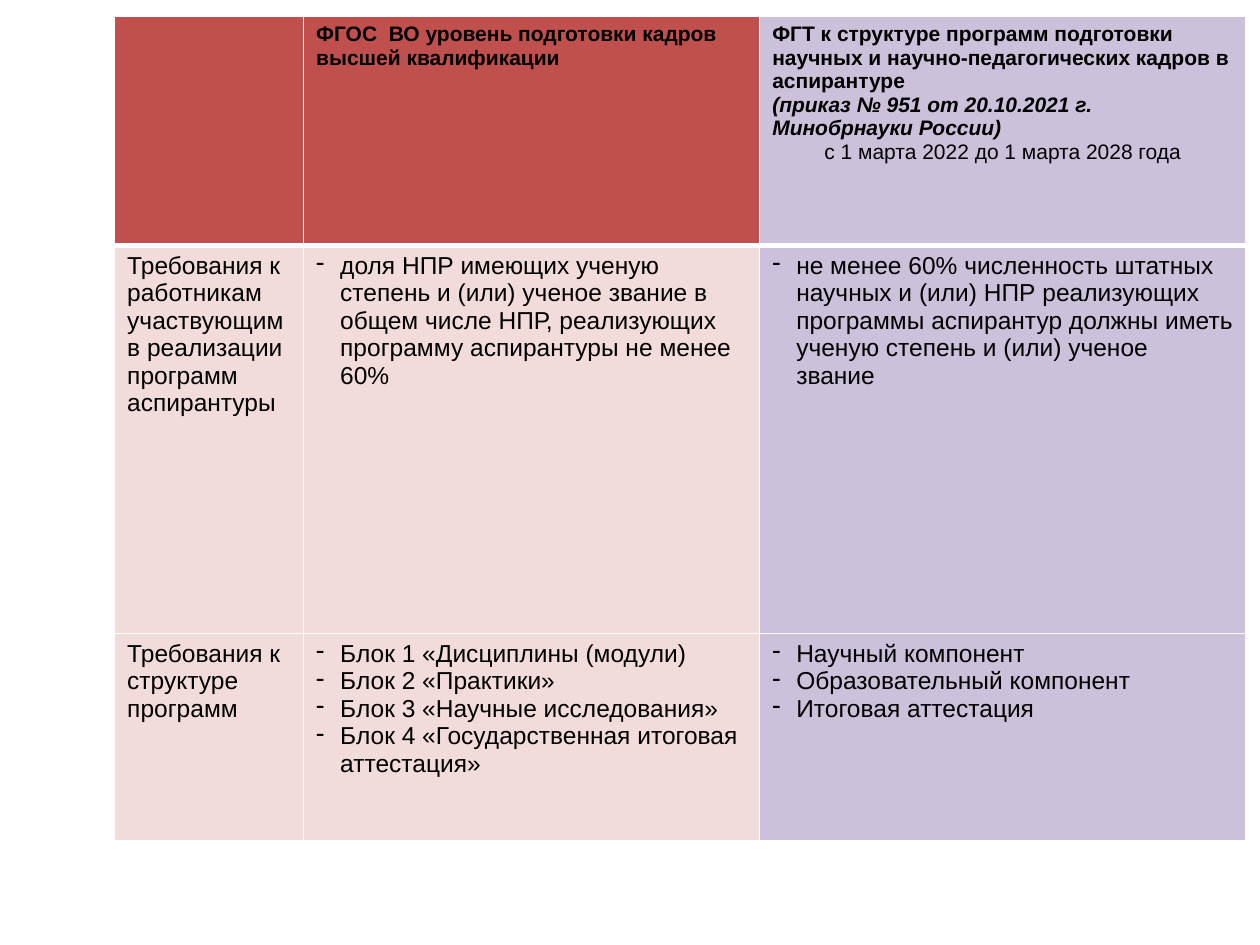
from lxml.etree import SubElement
from pptx import Presentation
from pptx.dml.color import RGBColor
from pptx.enum.text import PP_ALIGN
from pptx.oxml.ns import qn
from pptx.util import Inches, Pt

RED = RGBColor(0xC0, 0x50, 0x4D)
PINK = RGBColor(0xF2, 0xDC, 0xDB)
LILAC = RGBColor(0xCC, 0xC1, 0xDA)
BLACK = RGBColor(0, 0, 0)
WHITE = RGBColor(0xFF, 0xFF, 0xFF)

COLUMNS = [1.5, 3.62, 3.86]
ROWS = [1.82, 3.08, 1.64]
INDENT = Inches(0.19)

CONTENT = [
    [
        [],
        ["ФГОС  ВО уровень подготовки кадров высшей квалификации"],
        [
            "ФГТ к структуре программ подготовки научных и научно-педагогических кадров в аспирантуре"
            "\v(приказ № 951 от 20.10.2021 г. Минобрнауки России)",
            "с 1 марта 2022 до 1 марта 2028 года",
        ],
    ],
    [
        ["Требования к работникам участвующим в реализации программ аспирантуры"],
        ["доля НПР имеющих ученую степень и (или) ученое звание в общем числе НПР, "
         "реализующих программу аспирантуры не менее 60%"],
        ["не менее 60% численность штатных научных и (или) НПР реализующих программы "
         "аспирантур должны иметь ученую степень и (или) ученое звание"],
    ],
    [
        ["Требования к структуре программ"],
        [
            "Блок 1 «Дисциплины (модули)",
            "Блок 2 «Практики»",
            "Блок 3 «Научные исследования»",
            "Блок 4 «Государственная итоговая аттестация»",
        ],
        ["Научный компонент", "Образовательный компонент", "Итоговая аттестация"],
    ],
]


def add_border(cell, side, width):
    line = SubElement(cell._tc.get_or_add_tcPr(), qn(f"a:ln{side}"), w=str(Pt(width)))
    fill = SubElement(line, qn("a:solidFill"))
    SubElement(fill, qn("a:srgbClr"), val=str(WHITE))


def add_dash(para):
    properties = para._p.get_or_add_pPr()
    properties.set("marL", str(INDENT))
    properties.set("indent", str(-INDENT))
    SubElement(properties, qn("a:buChar"), char="-")


deck = Presentation()
deck.slide_width, deck.slide_height = Inches(10), Inches(7.5)
page = deck.slides.add_slide(deck.slide_layouts[6])

frame = page.shapes.add_table(
    len(ROWS), len(COLUMNS), Inches(0.91), Inches(0.13),
    Inches(sum(COLUMNS)), Inches(sum(ROWS)),
)
table = frame.table
for column, width in zip(table.columns, COLUMNS):
    column.width = Inches(width)
for row, height in zip(table.rows, ROWS):
    row.height = Inches(height)

for row_index, row_content in enumerate(CONTENT):
    is_header = row_index == 0
    size = Pt(12 if is_header else 14)
    for column_index, lines in enumerate(row_content):
        cell = table.cell(row_index, column_index)
        for side in "LRTB":
            at_header_edge = (row_index, side) in [(0, "B"), (1, "T")]
            add_border(cell, side, 3 if at_header_edge else 1)
        cell.fill.solid()
        left_color = RED if is_header else PINK
        cell.fill.fore_color.rgb = LILAC if column_index == 2 else left_color

        for line_index, line in enumerate(lines):
            text_frame = cell.text_frame
            para = text_frame.add_paragraph() if line_index else text_frame.paragraphs[0]
            para.text = line
            if not is_header and column_index > 0:
                add_dash(para)
            is_period = is_header and line_index == 1
            if is_period:
                para.alignment = PP_ALIGN.CENTER
            for line_break in para._p.findall(qn("a:br")):
                SubElement(line_break, qn("a:rPr"), sz=str(size.centipoints))
            for span_index, span in enumerate(para.runs):
                span.font.name = "Arial"
                span.font.size = size
                span.font.color.rgb = BLACK
                span.font.bold = is_header and not is_period
                span.font.italic = span_index == 1

deck.save("out.pptx")
